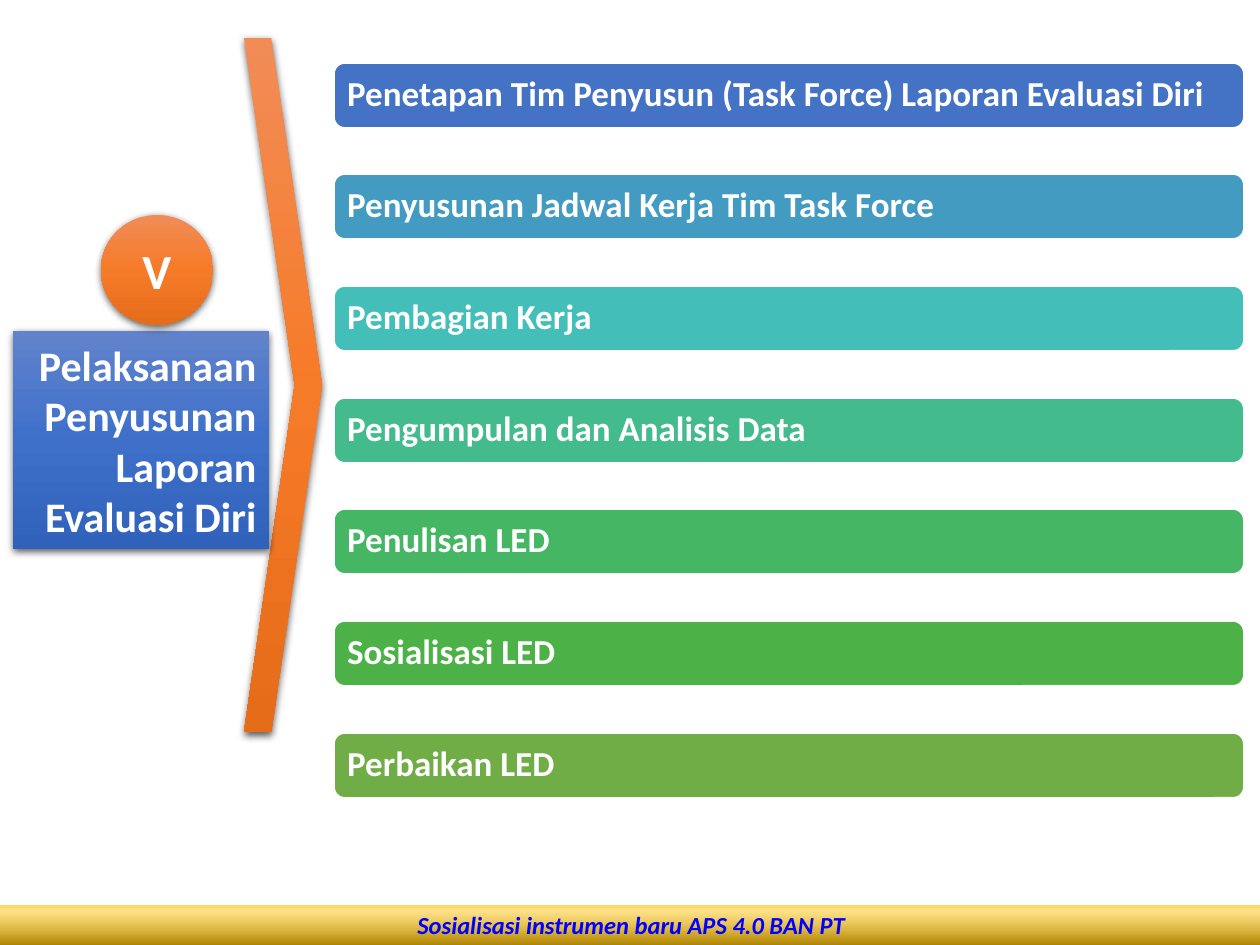
from lxml import etree
from pptx import Presentation
from pptx import util as u
from pptx.dml.color import RGBColor
from pptx.enum import shapes, text
from pptx.oxml.ns import qn

PX = 914400 // 126
FONT = "Calibri"
COLORS = {"white": "FFFFFF", "blue": "0000FF", "shadow": "000000"}
ORANGE = [(0, "F18C57", 100), (50, "F67B28", 100), (100, "E56C19", 100)]
BLUE = [(0, "6183CB", 100), (50, "3E70CA", 100), (100, "3062BB", 100)]
GOLD = [(0, "AB8100", 100), (83, "FFC208", 46), (100, "FFD966", 100)]
STEPS = [
    ("Penetapan Tim Penyusun (Task Force) Laporan Evaluasi Diri", "4472C4"),
    ("Penyusunan Jadwal Kerja Tim Task Force", "449BC1"),
    ("Pembagian Kerja", "43BEB9"),
    ("Pengumpulan dan Analisis Data", "43BB8D"),
    ("Penulisan LED", "45B664"),
    ("Sosialisasi LED", "4CB146"),
    ("Perbaikan LED", "70AD47"),
]
STEPS_TOP, STEPS_SPAN = 63, 670


def add_shape(s, kind, *box):
    """Add a preset shape at a px box, without line or shadow."""
    sp = s.shapes.add_shape(kind, *(v * PX for v in box))
    sp.shadow.inherit = False
    sp.line.fill.background()
    return sp


def set_line(sp, width):
    """Give a shape a white outline of a width in points."""
    sp.line.color.rgb = RGBColor.from_string(COLORS["white"])
    sp.line.width = u.Pt(width)


def add_color(parent, color, alpha):
    """Add a colour element with an opacity in percent."""
    clr = etree.SubElement(parent, qn("a:srgbClr"), val=color)
    if alpha < 100:
        etree.SubElement(clr, qn("a:alpha"), val=str(alpha * 1000))


def set_gradient(sp, stops, angle=90):
    """Fill a shape with a linear gradient, its angle clockwise."""
    sp.fill.gradient()
    grad = sp._element.spPr.find(qn("a:gradFill"))
    stop_list = grad.find(qn("a:gsLst"))
    for old in list(stop_list):
        stop_list.remove(old)
    for pos, color, alpha in stops:
        gs = etree.SubElement(stop_list, qn("a:gs"), pos=str(pos * 1000))
        add_color(gs, color, alpha)
    grad.find(qn("a:lin")).set("ang", str(angle * 60000))


def set_shadow(sp):
    """Give a shape a soft shadow below it."""
    effects = sp._element.spPr.find(qn("a:effectLst"))
    shadow = etree.SubElement(
        effects, qn("a:outerShdw"), blurRad=str(u.Pt(4.5)),
        dist=str(u.Pt(1.5)), dir=str(90 * 60000), algn="ctr", rotWithShape="0")
    add_color(shadow, COLORS["shadow"], 63)


def set_text(sp, words, size, align, color="white", italic=None):
    """Write one bold paragraph, centred vertically, and return it."""
    tf = sp.text_frame
    tf.word_wrap = True
    tf.vertical_anchor = text.MSO_ANCHOR.MIDDLE
    p = tf.paragraphs[0]
    p.alignment = align
    r = p.add_run()
    r.text = words
    r.font.name = FONT
    r.font.size = u.Pt(size)
    r.font.bold = True
    r.font.italic = italic
    r.font.color.rgb = RGBColor.from_string(COLORS[color])
    return p


def add_footer(s):
    """Add the gold band along the bottom edge."""
    sp = add_shape(s, shapes.MSO_SHAPE.RECTANGLE, -1, 904, 1265, 42)
    set_gradient(sp, GOLD, 270)
    set_line(sp, 0.75)
    set_text(sp, "Sosialisasi instrumen baru APS 4.0 BAN PT", 14,
             text.PP_ALIGN.CENTER, "blue", True)


def add_accent(s, kind, stops, *box):
    """Add a shape with a gradient and a shadow."""
    sp = add_shape(s, kind, *box)
    set_gradient(sp, stops)
    set_shadow(sp)
    return sp


def add_step(s, top, words, color):
    """Add one rounded bar that names a step."""
    sp = add_shape(s, shapes.MSO_SHAPE.ROUNDED_RECTANGLE, 334, top, 910, 65)
    sp.fill.solid()
    sp.fill.fore_color.rgb = RGBColor.from_string(color)
    set_line(sp, 1)
    tf = sp.text_frame
    tf.margin_left = tf.margin_right = 10 * PX
    tf.margin_top = tf.margin_bottom = 10 * PX
    p = set_text(sp, words, 20, text.PP_ALIGN.LEFT)
    p.line_spacing = 0.9


def main():
    """Build and save the slide."""
    prs = Presentation()
    prs.slide_width, prs.slide_height = u.Inches(10), u.Inches(7.5)
    s = prs.slides.add_slide(prs.slide_layouts[6])
    kinds = shapes.MSO_SHAPE
    add_footer(s)
    chevron = add_accent(s, kinds.CHEVRON, ORANGE, 244, 38, 78, 694)
    chevron.adjustments[0] = 0.65
    for i, (words, color) in enumerate(STEPS):
        top = STEPS_TOP + STEPS_SPAN * i // (len(STEPS) - 1)
        add_step(s, top, words, color)
    topic = add_accent(s, kinds.RECTANGLE, BLUE, 13, 331, 256, 218)
    set_text(topic, "Pelaksanaan Penyusunan Laporan Evaluasi Diri", 24,
             text.PP_ALIGN.RIGHT)
    number = add_accent(s, kinds.OVAL, ORANGE, 101, 215, 112, 110)
    set_text(number, "V", 28, text.PP_ALIGN.CENTER)
    prs.save("out.pptx")


if __name__ == "__main__":
    main()
